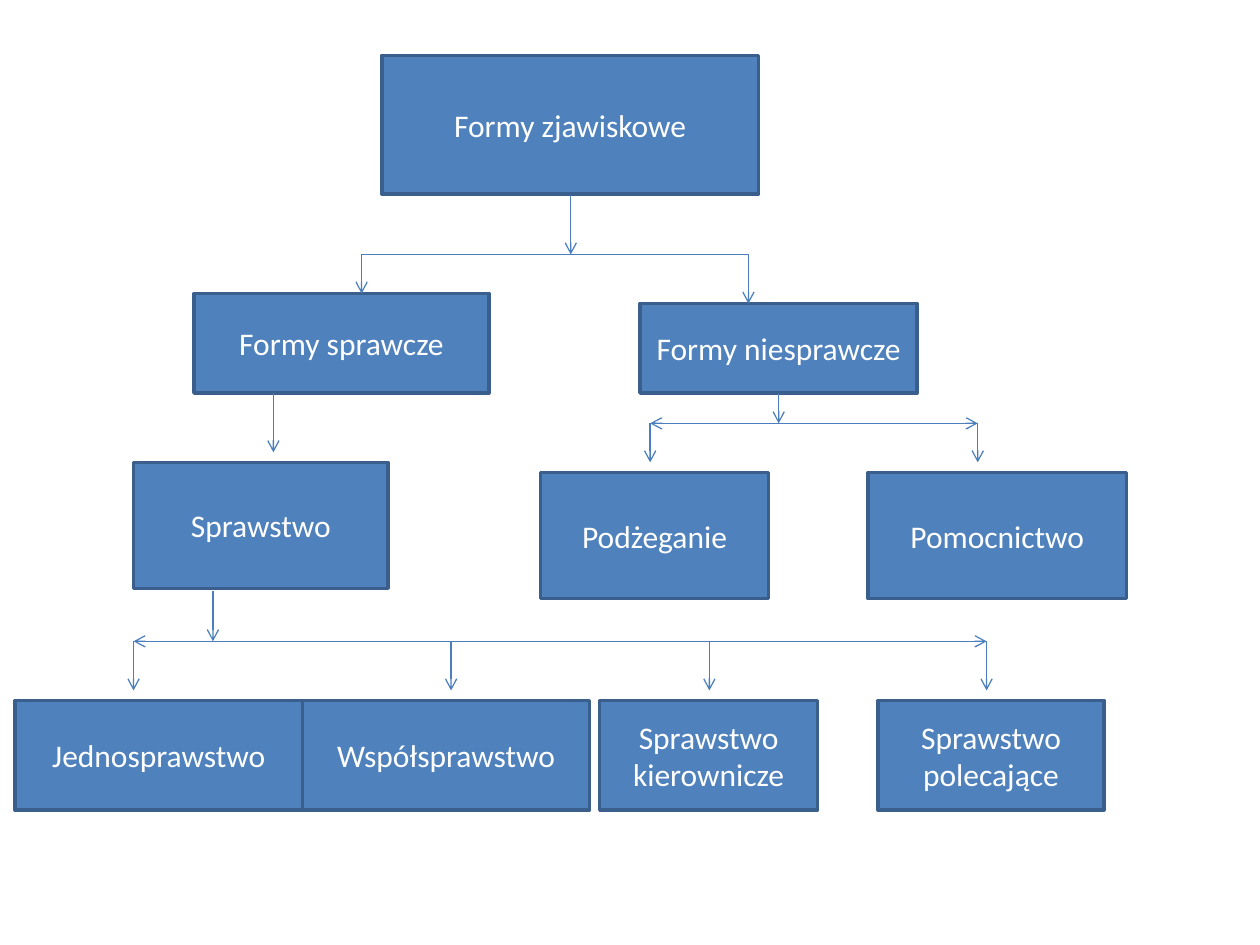
from dataclasses import dataclass

from lxml import etree
from pptx import Presentation
from pptx.dml.color import RGBColor
from pptx.enum import shapes, text
from pptx.oxml.ns import qn
from pptx.util import Inches, Pt


@dataclass(frozen=True)
class Theme:
    fill: RGBColor = RGBColor.from_string("4F81BD")
    border: RGBColor = RGBColor.from_string("3A5F8C")
    arrow: RGBColor = RGBColor.from_string("4B7EBC")
    label: RGBColor = RGBColor.from_string("FFFFFF")
    font: str = "Calibri"
    label_size: float = 18
    border_width: float = 2
    arrow_width: float = 0.75


THEME = Theme()

# Each level: box height, then (label, left, top, width)
LEVELS = [
    (1.1, [("Formy zjawiskowe", 3.03, 0.44, 2.99)]),
    (0.79, [("Formy sprawcze", 1.54, 2.33, 2.34)]),
    (0.71, [("Formy niesprawcze", 5.08, 2.41, 2.2)]),
    (1, [
        ("Sprawstwo", 1.06, 3.67, 2.02),
        ("Podżeganie", 4.29, 3.75, 1.81),
        ("Pomocnictwo", 6.89, 3.75, 2.05),
    ]),
    (0.87, [
        ("Jednosprawstwo", 0.12, 5.56, 2.28),
        ("Współsprawstwo", 2.4, 5.56, 2.28),
        ("Sprawstwo kierownicze", 4.76, 5.56, 1.73),
        ("Sprawstwo polecające", 6.97, 5.56, 1.79),
    ]),
]

# Each branch: stem x, stem top, rail y, drops as (x, bottom), rail has arrowheads
BRANCHES = [
    (4.53, 1.55, 2.02, [(2.87, 2.33), (5.94, 2.41)], False),
    (2.17, 3.12, 3.59, [], False),
    (6.18, 3.12, 3.36, [(5.16, 3.67), (7.76, 3.67)], True),
    (1.69, 4.69, 5.09, [(x, 5.48) for x in (1.06, 3.58, 5.63, 7.83)], True),
]


def add_box(slide, label, left, top, width, height):
    box = slide.shapes.add_shape(
        shapes.MSO_SHAPE.RECTANGLE, *map(Inches, (left, top, width, height)))
    box.shadow.inherit = False
    box.fill.solid()
    box.fill.fore_color.rgb = THEME.fill
    box.line.color.rgb = THEME.border
    box.line.width = Pt(THEME.border_width)
    frame = box.text_frame
    frame.word_wrap = True
    frame.vertical_anchor = text.MSO_ANCHOR.MIDDLE
    paragraph = frame.paragraphs[0]
    paragraph.alignment = text.PP_ALIGN.CENTER
    run = paragraph.add_run()
    run.text = label
    run.font.name = THEME.font
    run.font.size = Pt(THEME.label_size)
    run.font.color.rgb = THEME.label


def add_line(slide, start, end, arrowhead=True):
    line = slide.shapes.add_connector(
        shapes.MSO_CONNECTOR.STRAIGHT, *map(Inches, (*start, *end)))
    line.line.color.rgb = THEME.arrow
    line.line.width = Pt(THEME.arrow_width)
    if arrowhead:
        outline = line.line._get_or_add_ln()
        etree.SubElement(outline, qn("a:tailEnd"), type="arrow")
    etree.SubElement(line._element.spPr, qn("a:effectLst"))


def add_branch(slide, stem_x, stem_top, rail_y, drops, rail_arrows):
    """Draw a stem down to a horizontal rail, and a drop from it to each child."""
    hub = (stem_x, rail_y)
    add_line(slide, (stem_x, stem_top), hub)
    if not drops:
        return
    left, right = ((drops[i][0], rail_y) for i in (0, -1))
    if rail_arrows:
        add_line(slide, hub, left)
        add_line(slide, hub, right)
    else:
        add_line(slide, left, right, arrowhead=False)
    for x, bottom in drops:
        add_line(slide, (x, rail_y), (x, bottom))


def main():
    deck = Presentation()
    deck.slide_width, deck.slide_height = Inches(10), Inches(7.5)
    slide = deck.slides.add_slide(deck.slide_layouts[6])
    for height, boxes in LEVELS:
        for box in boxes:
            add_box(slide, *box, height)
    for branch in BRANCHES:
        add_branch(slide, *branch)
    deck.save("out.pptx")


if __name__ == "__main__":
    main()
